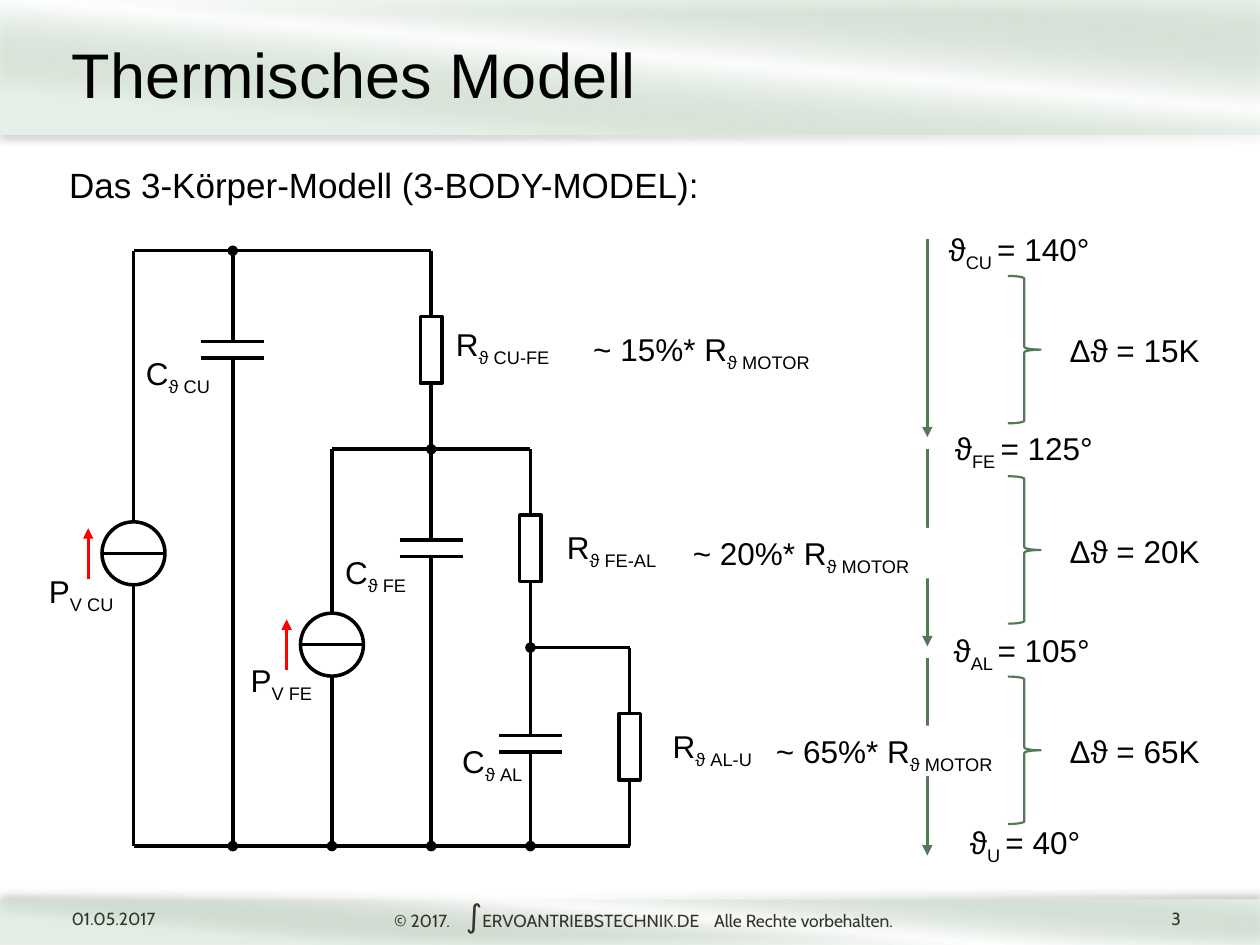
from dataclasses import dataclass
from typing import Optional

from lxml.etree import SubElement
from pptx import Presentation
from pptx.dml.color import RGBColor
from pptx.enum.shapes import MSO_CONNECTOR, MSO_SHAPE
from pptx.enum.text import MSO_ANCHOR, MSO_AUTO_SIZE, PP_ALIGN
from pptx.oxml import parse_xml
from pptx.oxml.ns import nsdecls, qn
from pptx.util import Inches, Pt

COLORS = {"black": "000000", "white": "FFFFFF", "green": "547957", "red": "FF0000",
          "band": "E6EFE7", "band_middle": "ADCFAF", "footer": "34352A"}
CELL = 0.1
PITCH = 63 / 8
LEFT, TOP = 10.6, 19.9
ARROW_COLUMN = 73.6
SECTION_PITCH = 15.9

presentation = Presentation()
presentation.slide_width, presentation.slide_height = Inches(10), Inches(7.5)
slide = presentation.slides.add_slide(presentation.slide_layouts[6])


@dataclass
class Branch:
    component: str
    column: float
    start: float
    center: float
    end: float
    start_dot: bool = False
    end_dot: bool = False


@dataclass
class Label:
    left: float
    top: float
    width: float
    symbol: str
    subscript: str = ""
    value: str = ""
    masked: bool = False


BRANCHES = [
    Branch("source", 0, 0, 3.05, 6),
    Branch("capacitor", 1, 0, 1, 6, True, True),
    Branch("source", 2, 2, 3.97, 6, False, True),
    Branch("resistor", 3, 0, 1, 2, False, True),
    Branch("capacitor", 3, 2, 3, 6, False, True),
    Branch("resistor", 4, 2, 3, 4, False, True),
    Branch("capacitor", 4, 4, 4.97, 6, False, True),
    Branch("resistor", 5, 4, 5, 6),
]
RAILS = [(0, 0, 3), (2, 2, 4), (4, 4, 5), (6, 0, 5)]
HALF_HEIGHTS = {"source": 2.5, "capacitor": 0.65, "resistor": 2.65}
LABELS = [
    Label(2.9, 44.9, 7.7, "P", "V CU"),
    Label(18.9, 52, 7.5, "P", "V FE"),
    Label(10.6, 27.6, 7.7, "C", "ϑ CU"),
    Label(26.4, 43.4, 7.4, "C", "ϑ FE"),
    Label(35.7, 58.4, 7.2, "C", "ϑ AL"),
    Label(35.2, 25.3, 10.4, "R", "ϑ CU-FE"),
    Label(44, 41.4, 10, "R", "ϑ FE-AL"),
    Label(52.4, 57.2, 9, "R", "ϑ AL-U"),
    Label(74.3, 17.8, 15.1, "ϑ", "CU ", "= 140°"),
    Label(74.8, 33.6, 15.1, "ϑ", "FE ", "= 125°"),
    Label(74.7, 49.6, 15.1, "ϑ", "AL ", "= 105°"),
    Label(76, 64.8, 12.6, "ϑ", "U ", "= 40°"),
    Label(46.1, 25.7, 20.4, "~ 15%* R", "ϑ MOTOR", masked=True),
    Label(54, 41.9, 20.4, "~ 20%* R", "ϑ MOTOR", masked=True),
    Label(60.6, 57.6, 20.4, "~ 65%* R", "ϑ MOTOR", masked=True),
]


def cells(count: float) -> int:
    return Inches(count * CELL)


def color(name: str) -> RGBColor:
    return RGBColor.from_string(COLORS[name])


def add_line(x1: float, y1: float, x2: float, y2: float, name: str = "black",
             width: float = 2, head: str = "", tail: str = "") -> None:
    connector = slide.shapes.add_connector(
        MSO_CONNECTOR.STRAIGHT, cells(x1), cells(y1), cells(x2), cells(y2))
    connector.line.color.rgb = color(name)
    connector.line.width = Pt(width)
    outline = connector.line._get_or_add_ln()
    for tag, kind in (("a:headEnd", head), ("a:tailEnd", tail)):
        if kind:
            SubElement(outline, qn(tag), type=kind)
    SubElement(connector._element.spPr, qn("a:effectLst"))


def add_outline(kind: MSO_SHAPE, left: float, top: float, width: float, height: float,
                name: str = "black", line_width: float = 2, fill: Optional[str] = None) -> None:
    shape = slide.shapes.add_shape(kind, cells(left), cells(top), cells(width), cells(height))
    shape.shadow.inherit = False
    if fill:
        shape.fill.solid()
        shape.fill.fore_color.rgb = color(fill)
    else:
        shape.fill.background()
    shape.line.color.rgb = color(name)
    shape.line.width = Pt(line_width)


def add_band(top: float, height: float, opacity: int, direction: int) -> None:
    shape = slide.shapes.add_shape(
        MSO_SHAPE.RECTANGLE, 0, cells(top), presentation.slide_width, cells(height))
    shape.line.fill.background()
    properties = shape._element.spPr
    gradient = parse_xml(
        f'<a:gradFill {nsdecls("a")} rotWithShape="1"><a:gsLst>'
        f'<a:gs pos="18000"><a:srgbClr val="{COLORS["band"]}"/></a:gs>'
        f'<a:gs pos="56000"><a:srgbClr val="{COLORS["band_middle"]}"><a:alpha val="0"/></a:srgbClr></a:gs>'
        f'<a:gs pos="100000"><a:srgbClr val="{COLORS["band"]}"/></a:gs>'
        f'</a:gsLst><a:lin ang="{275 * 60000}" scaled="0"/></a:gradFill>')
    properties.insert(2, gradient)
    properties.append(parse_xml(
        f'<a:effectLst {nsdecls("a")}><a:outerShdw blurRad="{Pt(4)}" dist="{Pt(3)}" '
        f'dir="{direction * 60000}" algn="t" rotWithShape="0"><a:srgbClr val="{COLORS["black"]}">'
        f'<a:alpha val="{opacity * 1000}"/></a:srgbClr></a:outerShdw></a:effectLst>'))


def add_text(left: float, top: float, width: float, height: float, pieces: list[tuple[str, float]],
             font: str = "Arial", name: str = "black", wrap: bool = True):
    box = slide.shapes.add_textbox(cells(left), cells(top), cells(width), cells(height))
    box.text_frame.word_wrap = wrap
    paragraph = box.text_frame.paragraphs[0]
    for text, size in pieces:
        run = paragraph.add_run()
        run.text = text
        run.font.size = Pt(size)
        run.font.name = font
        run.font.color.rgb = color(name)
    return box


def add_label(label: Label) -> None:
    pieces = [(text, 18) for text in (label.symbol, label.subscript, label.value) if text]
    box = add_text(label.left, label.top, label.width, 4, pieces, wrap=False)
    box.text_frame.auto_size = MSO_AUTO_SIZE.SHAPE_TO_FIT_TEXT
    if label.subscript:
        subscript = box.text_frame.paragraphs[0].runs[1]
        subscript._r.get_or_add_rPr().set("baseline", "-25000")
    if label.masked:
        box.fill.solid()
        box.fill.fore_color.rgb = color("white")


def add_branch(branch: Branch) -> None:
    x = LEFT + branch.column * PITCH
    start, center, end = (TOP + row * PITCH for row in (branch.start, branch.center, branch.end))
    half = HALF_HEIGHTS[branch.component]
    add_line(x, start, x, center - half, head="oval" if branch.start_dot else "")
    add_line(x, center + half, x, end, tail="oval" if branch.end_dot else "")
    if branch.component == "source":
        add_outline(MSO_SHAPE.OVAL, x - half, center - half, 2 * half, 2 * half)
        add_line(x - half, center, x + half, center)
        add_line(x - 3.6, center + 2, x - 3.6, center - 2, "red", 1.5, tail="triangle")
    elif branch.component == "capacitor":
        for plate in (center - half, center + half):
            add_line(x - 2.5, plate, x + 2.5, plate)
    else:
        add_outline(MSO_SHAPE.RECTANGLE, x - 0.85, center - half, 1.7, 2 * half, fill="white")


def add_footer() -> None:
    add_text(4.7, 71.6, 9.6, 2.9, [("01.05.2017", 10)], "Cabin", "footer")
    number = add_text(86.4, 71.6, 8.3, 2.1, [("3", 10)], "Cabin", "footer")
    number.text_frame.paragraphs[0].alignment = PP_ALIGN.RIGHT
    copyright_line = add_text(30.3, 70.6, 41.7, 4.4, [
        ("© 2017.\t", 10), ("∫", 18),
        ("ERVOANTRIEBSTECHNIK.DE\tAlle Rechte vorbehalten.", 10)], "Cabin", "footer")
    properties = copyright_line.text_frame.paragraphs[0]._p.get_or_add_pPr()
    tabs = SubElement(properties, qn("a:tabLst"))
    for position in (5.7, 25.4):
        SubElement(tabs, qn("a:tab"), pos=str(cells(position)), algn="l")


def main() -> None:
    add_band(71.4, 3.6, 24, 270)
    add_band(0, 10.7, 17, 90)
    title = add_text(4.7, 0.8, 90, 10, [("Thermisches Modell", 36)])
    title.text_frame.vertical_anchor = MSO_ANCHOR.MIDDLE
    add_text(4.5, 12.5, 94.3, 5.3, [("Das 3-Körper-Modell (3-BODY-MODEL):", 20)])
    for row, first, last in RAILS:
        y = TOP + row * PITCH
        add_line(LEFT + first * PITCH, y, LEFT + last * PITCH, y)
    for branch in BRANCHES:
        add_branch(branch)
    for section, difference in enumerate(("15K", "20K", "65K")):
        arrow_top = 19 + section * 16.6
        add_line(ARROW_COLUMN, arrow_top, ARROW_COLUMN, arrow_top + 15.7, "green", 1.5, tail="triangle")
        offset = section * SECTION_PITCH
        add_outline(MSO_SHAPE.RIGHT_BRACE, 80, 21.9 + offset, 2.6, 11.7, "green", 1.25)
        add_label(Label(83.9, 25.8 + offset, 15.7, f"Δϑ = {difference}"))
    for label in LABELS:
        add_label(label)
    add_footer()
    presentation.save("out.pptx")


if __name__ == "__main__":
    main()
